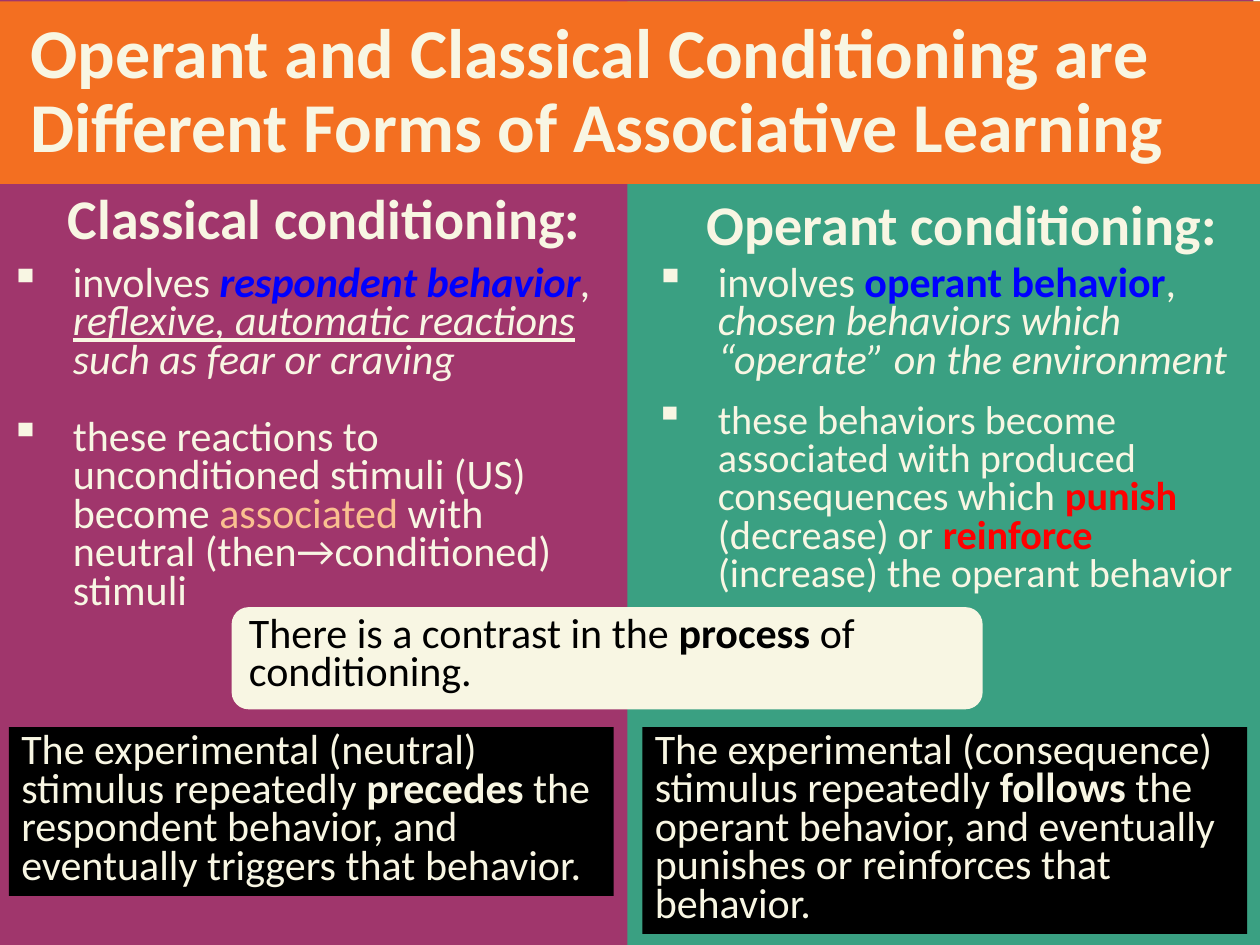
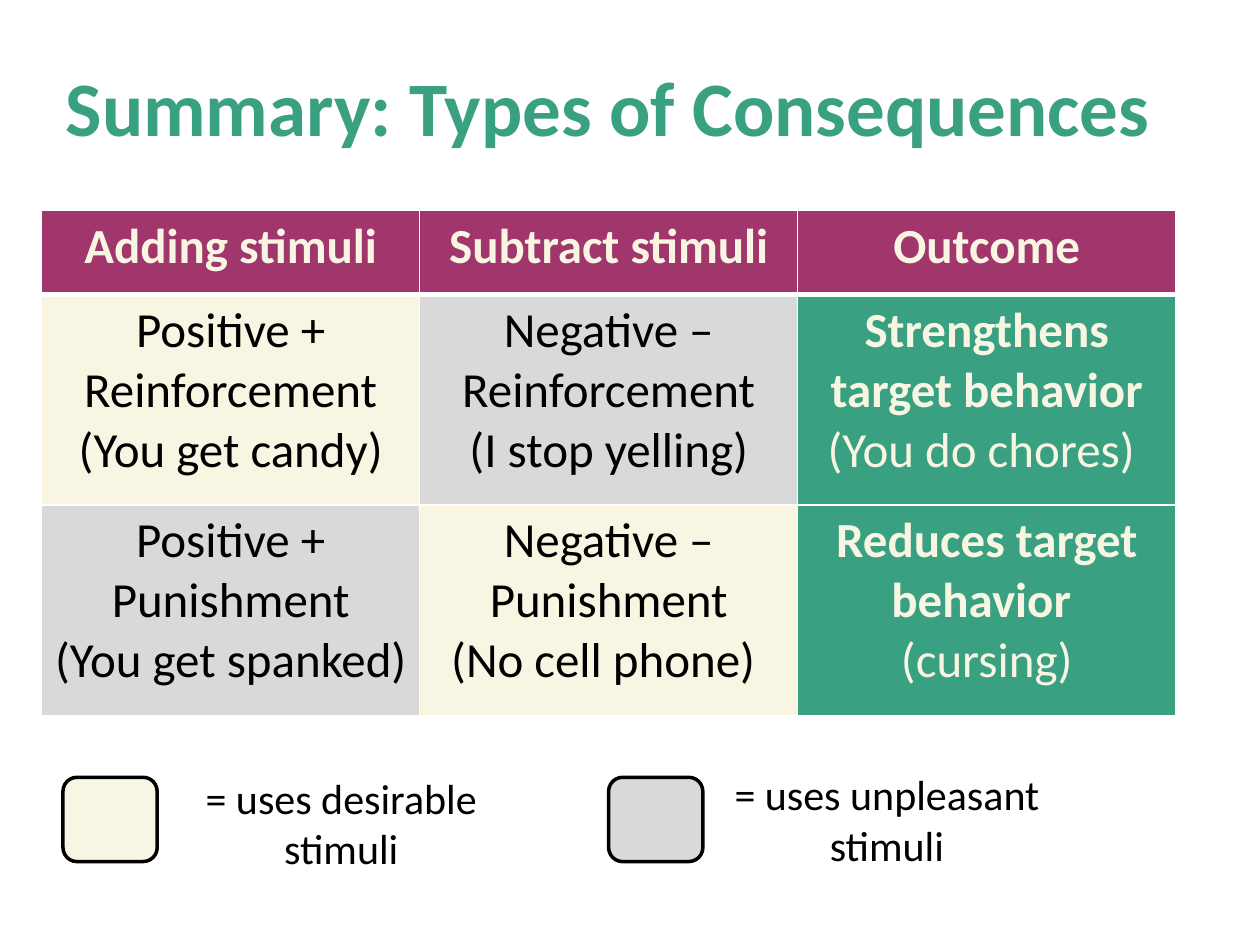
import pptx
import pptx.dml.color
import pptx.enum.shapes
import pptx.enum.text
import pptx.oxml.ns
import pptx.util
from lxml import etree
from pptx.util import Cm

CREAM, PURPLE, GREEN, ORANGE = "F8F6E3", "A0366C", "3AA082", "F36F21"
BLUE, RED, PEACH = "0000FF", "FF0000", "FAC090"
BLACK, WHITE, GREY = "000000", "FFFFFF", "D9D9D9"
FONT = "Calibri"
TITLE_ONLY = 5

SHAPE = pptx.enum.shapes.MSO_SHAPE
ANCHOR = pptx.enum.text.MSO_ANCHOR
LEFT = pptx.enum.text.PP_ALIGN.LEFT
CENTER = pptx.enum.text.PP_ALIGN.CENTER
HEADING_INSET = Cm(0.76)


def rgb(hex_string):
    return pptx.dml.color.RGBColor.from_string(hex_string)


def cm_box(box):
    return [Cm(length) for length in box]


def within(box, part):
    """Shift a part given relative to a box onto the slide."""
    return (box[0] + part[0], box[1] + part[1], *part[2:])


def write(frame, runs, size=24, color=CREAM, align=LEFT, line=None, after=0,
          bullet=False, **emphasis):
    """Add a paragraph; a run is a string or (string, overrides)."""
    first = frame.paragraphs[0]
    paragraph = frame.add_paragraph() if first.runs else first
    if bullet:
        properties = paragraph._p.get_or_add_pPr()
        properties.set("marL", str(Cm(1.27)))
        properties.set("indent", str(-Cm(1.27)))
        mark = etree.SubElement(properties, pptx.oxml.ns.qn("a:buChar"))
        mark.set("char", "▪")
    paragraph.alignment = align
    paragraph.space_before = pptx.util.Pt(0)
    paragraph.space_after = pptx.util.Pt(after)
    if line:
        paragraph.line_spacing = pptx.util.Pt(line)
    for item in [runs] if isinstance(runs, str) else runs:
        text, overrides = (item, {}) if isinstance(item, str) else item
        style = {"size": size, "color": color, "bold": False, **emphasis, **overrides}
        run = paragraph.add_run()
        run.text = text
        run.font.name = FONT
        run.font.size = pptx.util.Pt(style.pop("size"))
        run.font.color.rgb = rgb(style.pop("color"))
        for name, value in style.items():
            setattr(run.font, name, value)


def prepare(frame, anchor=ANCHOR.TOP, left_inset=None):
    frame.word_wrap = True
    frame.auto_size = pptx.enum.text.MSO_AUTO_SIZE.NONE
    frame.vertical_anchor = anchor
    if left_inset is not None:
        frame.margin_left = left_inset
    return frame


def text_area(slide, box, **layout):
    return prepare(slide.shapes.add_textbox(*cm_box(box)).text_frame, **layout)


def block(slide, box, fill, kind=SHAPE.RECTANGLE, outline=None):
    shape = slide.shapes.add_shape(kind, *cm_box(box))
    shape.shadow.inherit = False
    shape.fill.solid()
    shape.fill.fore_color.rgb = rgb(fill)
    if outline:
        shape.line.color.rgb = rgb(outline)
        shape.line.width = pptx.util.Pt(2)
    else:
        shape.line.fill.background()
    return shape


def place_title(slide, box, text, left_inset=None, **style):
    title = slide.shapes.title
    title.left, title.top, title.width, title.height = cm_box(box)
    write(prepare(title.text_frame, ANCHOR.MIDDLE, left_inset), text, bold=True, **style)
    return title


def banner(slide, box, text):
    """Turn the title into a filled band lying over the columns."""
    title = place_title(slide, box, text, HEADING_INSET, size=40, line=42)
    title.fill.solid()
    title.fill.fore_color.rgb = rgb(ORANGE)
    title.element.getparent().append(title.element)


def conditioning_column(slide, box, color, heading, points, summary):
    """Draw a panel with heading, bullets and summary, placed inside box."""
    block(slide, box, color)

    heading_box, heading_text, heading_style = heading
    frame = text_area(slide, within(box, heading_box), anchor=ANCHOR.MIDDLE,
                      left_inset=HEADING_INSET)
    write(frame, heading_text, size=32, bold=True, **heading_style)

    points_box, paragraphs = points
    frame = text_area(slide, within(box, points_box))
    for runs, style in paragraphs:
        write(frame, runs, line=22, bullet=True, **style)

    summary_box, summary_runs = summary
    shape = block(slide, within(box, summary_box), BLACK)
    write(prepare(shape.text_frame, ANCHOR.MIDDLE), summary_runs, line=22)


def contrast_note(slide, box):
    note = block(slide, box, CREAM, SHAPE.ROUNDED_RECTANGLE)
    write(prepare(note.text_frame),
          ["There is a contrast in the ", ("process", {"bold": True}), " of conditioning."],
          color=BLACK, line=22)


def comparison_slide(deck):
    slide = deck.slides.add_slide(deck.slide_layouts[TITLE_ONLY])
    bold, italic = {"bold": True}, {"italic": True}
    blue, red = {"bold": True, "color": BLUE}, {"bold": True, "color": RED}

    conditioning_column(
        slide, (-0.05, 0, 25.32, 19.07), PURPLE,
        heading=((-0.41, 3.28, 13.49, 2.72), "Classical conditioning:",
                 {"align": CENTER, "line": 24, "after": 6}),
        points=((0, 5.26, 12.67, 8.1), [
            (["involves ", ("respondent behavior", {**blue, **italic}),
              (", ", italic),
              ("reflexive, automatic reactions ", {**italic, "underline": True}),
              ("such as fear or craving", italic)], {"after": 22}),
            (["these reactions to unconditioned stimuli (US) become ",
              ("associated", {"color": PEACH}),
              " with neutral (then→conditioned) stimuli"], {}),
        ]),
        summary=((0.23, 14.66, 12.19, 3.4), [
            "The experimental (neutral) stimulus repeatedly ", ("precedes", bold),
            " the respondent behavior, and eventually triggers that behavior."]))

    conditioning_column(
        slide, (12.65, 0.03, 12.78, 19.05), GREEN,
        heading=((0.84, 3.04, 11.91, 2.72), "Operant conditioning:", {"line": 42}),
        points=((0.3, 5.23, 12.45, 6.96), [
            (["involves ", ("operant behavior", blue), ", ",
              ("chosen behaviors which “operate” on the environment", italic)],
             {"after": 12}),
            (["these behaviors become associated with produced consequences which ",
              ("punish ", red), "(decrease) or ", ("reinforce ", red),
              "(increase) the operant behavior"], {"size": 23, "after": 12}),
        ]),
        summary=((0.3, 14.63, 12.19, 4.17), [
            "The experimental (consequence) stimulus repeatedly ", ("follows", bold),
            " the operant behavior, and eventually punishes or reinforces that behavior."]))

    banner(slide, (-0.15, 0.03, 25.55, 3.68),
           "Operant and Classical Conditioning are Different Forms of Associative Learning")
    contrast_note(slide, (4.67, 12.24, 15.14, 2.06))


def border_cell(cell, **widths):
    properties = cell._tc.get_or_add_tcPr()
    for side in "LRTB":
        line = etree.SubElement(properties, pptx.oxml.ns.qn(f"a:ln{side}"))
        line.set("w", str(pptx.util.Pt(widths.get(side, 1))))
        fill = etree.SubElement(line, pptx.oxml.ns.qn("a:solidFill"))
        etree.SubElement(fill, pptx.oxml.ns.qn("a:srgbClr")).set("val", WHITE)


def consequence_table(slide, box):
    headers = ["Adding stimuli", "Subtract stimuli", "Outcome"]
    rows = [
        [("Positive + Reinforcement", "(You get candy)", CREAM),
         ("Negative –Reinforcement", "(I stop yelling)", GREY),
         ("Strengthens target behavior", "(You do chores) ", GREEN)],
        [("Positive + Punishment", "(You get spanked)", GREY),
         ("Negative –Punishment", "(No cell phone) ", CREAM),
         ("Reduces target behavior ", "(cursing)", GREEN)],
    ]
    grid = [[(header, None, PURPLE) for header in headers]] + rows
    table = slide.shapes.add_table(len(grid), len(headers), *cm_box(box)).table
    for row, height in zip(table.rows, (1.7, 4.24, 4.24)):
        row.height = Cm(height)
    for r, contents in enumerate(grid):
        for c, (term, example, fill) in enumerate(contents):
            cell = table.cell(r, c)
            border_cell(cell, **({"B": 3} if r == 0 else {"T": 3} if r == 1 else {}))
            cell.fill.solid()
            cell.fill.fore_color.rgb = rgb(fill)
            strong = fill in (PURPLE, GREEN)
            style = {"size": 28, "color": CREAM if strong else BLACK, "align": CENTER}
            write(cell.text_frame, term, bold=strong, **style)
            if example:
                write(cell.text_frame, example, **style)


def legend_entry(slide, box, color, text, label_top):
    """Draw a swatch at the left of box and its label beside it."""
    block(slide, within(box, (0, 0, 1.9, box[3])), color, SHAPE.ROUNDED_RECTANGLE, BLACK)
    label = text_area(slide, within(box, (1.9, label_top, box[2] - 1.9, 2.31)))
    write(label, text, color=BLACK, align=CENTER)


def summary_slide(deck):
    slide = deck.slides.add_slide(deck.slide_layouts[TITLE_ONLY])
    place_title(slide, (0.84, 0.86, 22.86, 3.05), "Summary: Types of Consequences",
                size=44, color=GREEN, align=CENTER, line=38)
    consequence_table(slide, (0.84, 4.24, 22.86, 10.18))
    legend_entry(slide, (1.27, 15.67, 9.32, 1.7), CREAM, "= uses desirable stimuli", -0.23)
    legend_entry(slide, (12.27, 15.67, 9.32, 1.7), GREY, "= uses unpleasant stimuli", -0.3)


def main():
    deck = pptx.Presentation()
    deck.slide_width, deck.slide_height = Cm(25.4), Cm(19.05)
    comparison_slide(deck)
    summary_slide(deck)
    deck.save("out.pptx")


if __name__ == "__main__":
    main()
